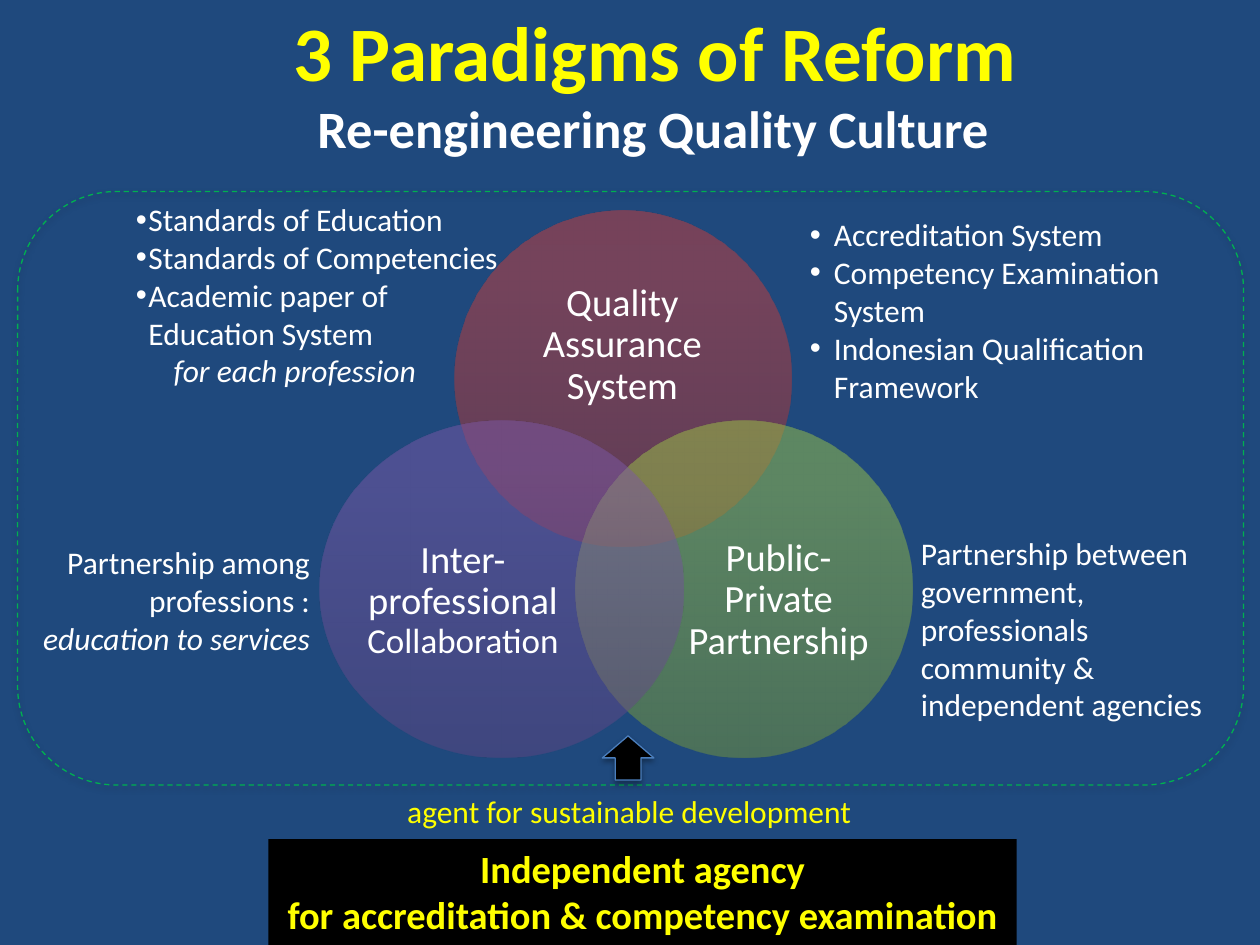
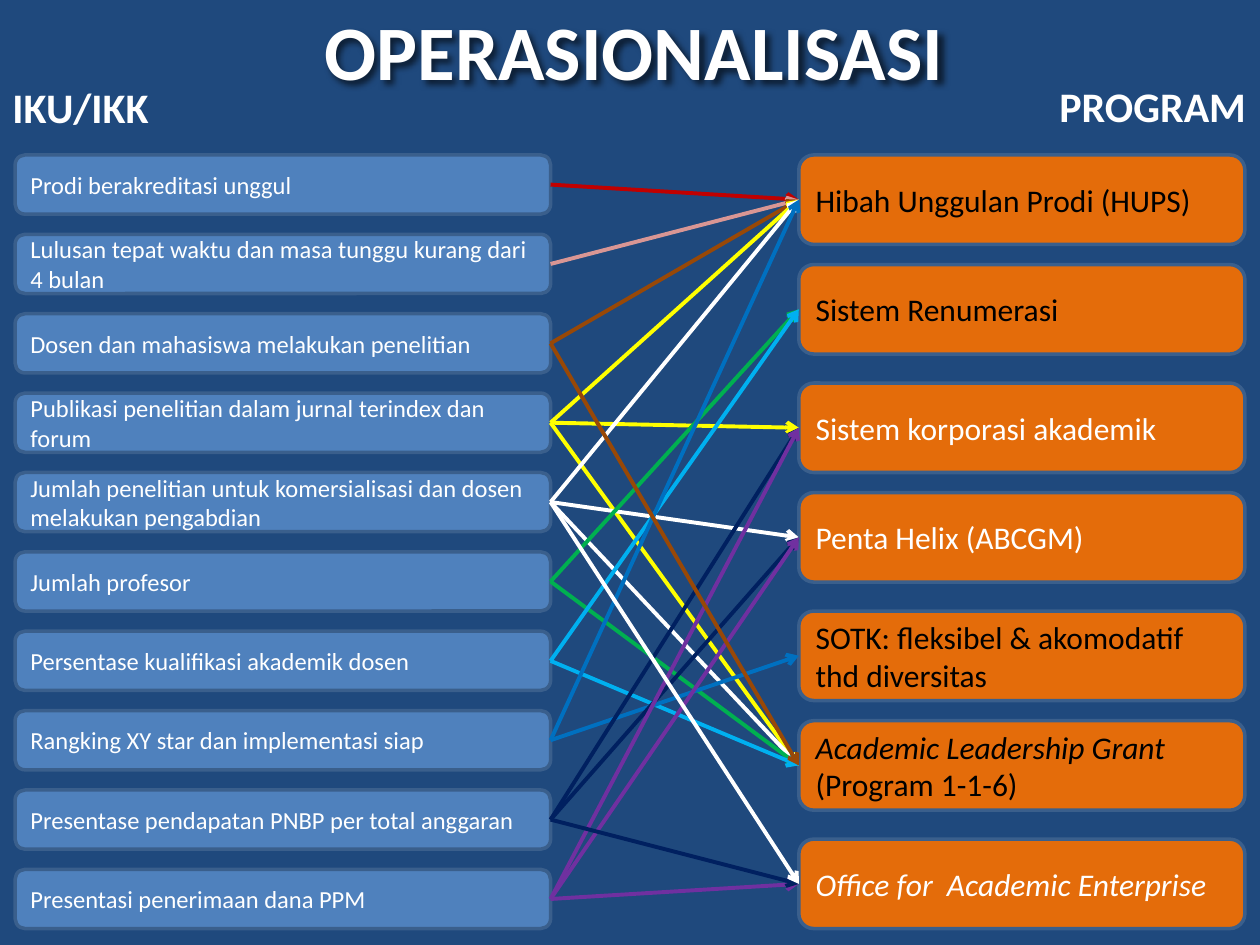
from dataclasses import dataclass

from lxml.etree import SubElement as Sub
from pptx import Presentation
from pptx.dml.color import RGBColor as Rgb
from pptx.enum.dml import MSO_LINE as Dash
from pptx.enum.shapes import MSO_CONNECTOR as Link, MSO_SHAPE as Kind
from pptx.enum.text import MSO_ANCHOR as Anchor, MSO_AUTO_SIZE as Fit, PP_ALIGN as Align
from pptx.oxml.ns import qn
from pptx.util import Inches, Pt


@dataclass(frozen=True)
class Theme:
    font: str = "Calibri"
    back: str = "1F497D"
    white: str = "FFFFFF"
    black: str = "000000"
    gold: str = "FFFF00"
    green: str = "00B050"
    blue: str = "4F81BD"
    edge: str = "3A5F8C"
    rim: str = "4B7EBC"
    orange: str = "E46C0A"
    red_fade: tuple = ("9C2F2D", "CB3E3A", "CE3B37")
    lime_fade: tuple = ("779737", "9BC348", "9DC746")
    plum_fade: tuple = ("5F4480", "7B58A6", "7C57A8")
    rays: tuple = ("C00000", "D99694", "984807", "FFFF00", "FFFFFF",
                   "00B050", "00B0F0", "0070C0", "002060", "7030A0")
    title: int = 44
    lead: int = 30
    head: int = 24
    ring: int = 22
    sub: int = 20
    body: int = 18
    small: int = 14


THEME = Theme()


def add_shade(shape, blur, dist, angle, alpha):
    shape.shadow.inherit = False
    shade = Sub(shape._element.spPr.find(qn("a:effectLst")), qn("a:outerShdw"),
                blurRad=str(Pt(blur)), dist=str(Pt(dist)),
                dir=str(angle * 60000), algn="tl", rotWithShape="0")
    tone = Sub(shade, qn("a:srgbClr"), val=THEME.black)
    Sub(tone, qn("a:alpha"), val=str(alpha * 1000))


def write(shape, *paras, anchor=Anchor.TOP, pad=None, wrap=True, fit=Fit.NONE, **base):
    frame = shape.text_frame
    frame.word_wrap = wrap
    frame.auto_size = fit
    frame.vertical_anchor = anchor
    if pad is not None:
        frame.margin_left = frame.margin_right = Inches(pad)
        frame.margin_top = frame.margin_bottom = Inches(pad)
    for i, para in enumerate(paras):
        line = frame.paragraphs[0] if i == 0 else frame.add_paragraph()
        runs = para if isinstance(para, list) else [(para, {})]
        look = base | runs[0][1]
        line.alignment = look.get("align", Align.LEFT)
        if "space" in look:
            line.line_spacing = look["space"]
        if "inset" in look:
            props = line._p.get_or_add_pPr()
            left, first = look["inset"]
            props.set("marL", str(Inches(left)))
            props.set("indent", str(Inches(first)))
            if look.get("mark"):
                Sub(props, qn("a:buFont"), typeface="Arial")
                Sub(props, qn("a:buChar"), char=look["mark"])
        for text, extra in runs:
            look = base | extra
            if text == "\n":
                line.add_line_break()
                continue
            run = line.add_run()
            run.text = text
            font = run.font
            font.name = THEME.font
            font.size = Pt(look.get("size", THEME.body))
            font.bold = look.get("bold", False)
            font.italic = look.get("italic", False)
            font.color.rgb = Rgb.from_string(look.get("color", THEME.white))


class Deck:
    def __init__(self, theme):
        self.theme = theme
        self.show = Presentation()
        self.show.slide_width, self.show.slide_height = Inches(10), Inches(7.5)
        self.slide = None

    def start(self, text, box, shade=False, **look):
        self.slide = self.show.slides.add_slide(self.show.slide_layouts[5])
        paint = self.slide.background.fill
        paint.solid()
        paint.fore_color.rgb = Rgb.from_string(self.theme.back)
        title = self.slide.shapes.title
        title.left, title.top, title.width, title.height = map(Inches, box)
        write(title, text, anchor=Anchor.MIDDLE, align=Align.CENTER,
              size=self.theme.title, bold=True, **look)
        if shade:
            add_shade(title, 4, 3, 45, 60)

    def text(self, box, *paras, **look):
        label = self.slide.shapes.add_textbox(*map(Inches, box))
        write(label, *paras, **look)

    def shape(self, kind, box, fill=None, line=None, width=0.75, dash=None, shade=False):
        item = self.slide.shapes.add_shape(kind, *map(Inches, box))
        item.shadow.inherit = False
        if fill:
            item.fill.solid()
            item.fill.fore_color.rgb = Rgb.from_string(fill)
        else:
            item.fill.background()
        if line:
            item.line.color.rgb = Rgb.from_string(line)
            item.line.width = Pt(width)
        else:
            item.line.fill.background()
        if dash:
            item.line.dash_style = dash
        if shade:
            add_shade(item, 3.1, 1.8, 90, 35)
        return item

    def ring(self, box, fade):
        item = self.shape(Kind.OVAL, box)
        item.fill.gradient()
        item.fill.gradient_angle = 90
        stops = item._element.spPr.find(".//" + qn("a:gsLst"))
        for old in list(stops):
            stops.remove(old)
        for place, color in zip((0, 80, 100), fade):
            stop = Sub(stops, qn("a:gs"), pos=str(place * 1000))
            tone = Sub(stop, qn("a:srgbClr"), val=color)
            Sub(tone, qn("a:alpha"), val="50000")

    def card(self, box, fill, *paras, **look):
        item = self.shape(Kind.ROUNDED_RECTANGLE, box, fill, self.theme.edge, 2)
        write(item, *paras, anchor=Anchor.MIDDLE, **look)
        return item

    def arrow(self, start, end, color):
        line = self.slide.shapes.add_connector(
            Link.STRAIGHT, start.left + start.width, start.top + start.height // 2,
            end.left, end.top + end.height // 2)
        line.begin_connect(start, 3)
        line.end_connect(end, 1)
        line.line.color.rgb = Rgb.from_string(color)
        line.line.width = Pt(2.25)
        props = line._element.spPr
        Sub(props.find(qn("a:ln")), qn("a:tailEnd"), type="arrow")
        Sub(props, qn("a:effectLst"))


def draw_reform(deck):
    t = deck.theme
    deck.start("3 Paradigms of Reform", (0.7, -0.22, 9, 1.25), color=t.gold)
    deck.shape(Kind.ROUNDED_RECTANGLE, (0.14, 1.52, 9.73, 4.71),
               line=t.green, dash=Dash.DASH, shade=True)
    rings = (
        ((3.61, 1.67, 2.67, 2.67), t.red_fade, (3.96, 2.14, 1.96, 1.2),
         "Quality Assurance System"),
        ((4.57, 3.34, 2.67, 2.67), t.lime_fade, (5.38, 4.03, 1.6, 1.47),
         "Public-Private Partnership"),
        ((2.54, 3.34, 2.88, 2.67), t.plum_fade, (2.81, 4.03, 1.73, 1.47),
         [("Inter-professional ", {}), ("Collaboration", {"size": t.sub})]),
    )
    for oval, fade, box, words in rings:
        deck.ring(oval, fade)
        deck.text(box, words, size=t.ring, anchor=Anchor.MIDDLE, pad=0,
                  align=Align.CENTER, space=0.9)

    deck.text((0.98, 1.54, 3.17, 1.92),
              "Standards of Education", "Standards of Competencies",
              "Academic paper of Education System",
              [("for each profession", {"italic": True, "mark": None, "inset": (0.19, 0.11)})],
              mark="•", inset=(0.1, -0.1))
    deck.text((6.33, 1.66, 3.39, 1.92),
              "Accreditation System", "Competency Examination System",
              "Indonesian Qualification Framework", mark="•", inset=(0.19, -0.19))
    deck.text((7.21, 4.19, 2.52, 1.62), "Partnership between government, "
              "professionals community & independent agencies")
    deck.text((-0.1, 4.26, 2.66, 1.01), "Partnership among professions :",
              [("education to services", {"italic": True})], align=Align.RIGHT)
    deck.shape(Kind.UP_ARROW, (4.78, 5.84, 0.41, 0.35), t.black, t.rim, shade=True)

    base = deck.shape(Kind.RECTANGLE, (2.13, 6.66, 5.94, 0.84), t.black)
    write(base, "Independent agency", "for accreditation & competency examination",
          size=t.ring, color=t.gold, bold=True, align=Align.CENTER)
    deck.text((2.34, 0.71, 5.69, 0.61), "Re-engineering Quality Culture",
              size=t.lead, bold=True, align=Align.CENTER)
    deck.text((2.63, 6.24, 4.73, 0.4), "agent for sustainable development",
              color=t.gold, align=Align.CENTER)


def draw_links(deck):
    t = deck.theme
    deck.start("OPERASIONALISASI", (2.24, -0.03, 5.59, 0.85), shade=True)
    for box, head in (((0, 0.6, 1.29, 0.5), "IKU/IKK"), ((8.31, 0.59, 1.7, 0.5), "PROGRAM")):
        deck.text(box, head, size=t.head, bold=True, wrap=False, fit=Fit.SHAPE_TO_FIT_TEXT)

    goals = (
        "Prodi berakreditasi unggul",
        "Lulusan tepat waktu dan masa tunggu kurang dari 4 bulan",
        "Dosen dan mahasiswa melakukan penelitian",
        "Publikasi penelitian dalam jurnal terindex dan forum",
        "Jumlah penelitian untuk komersialisasi dan dosen melakukan pengabdian",
        "Jumlah profesor",
        "Persentase kualifikasi akademik dosen",
        "Rangking XY star dan implementasi siap",
        "Presentase pendapatan PNBP per total anggaran",
        "Presentasi penerimaan dana PPM",
    )
    plans = (
        ("Hibah Unggulan Prodi (HUPS)", t.black),
        ("Sistem Renumerasi", t.black),
        ("Sistem korporasi akademik", t.white),
        ("Penta Helix (ABCGM)", t.white),
        ("SOTK: fleksibel & akomodatif thd diversitas", t.black),
        ([("Academic Leadership Grant", {"italic": True}), ("\n", {}),
          ("(Program 1-1-6)", {})], t.black),
        ([("Office for  Academic Enterprise", {"italic": True})], t.white),
    )
    top = 1.23
    left = [deck.card((0.12, top + 0.63 * i, 4.25, 0.47), t.blue, goal, size=t.small)
            for i, goal in enumerate(goals)]
    right = [deck.card((6.34, top + 1.81 * (i // 2) + 0.87 * (i % 2), 3.54, 0.71),
                       t.orange, plan, color=color)
             for i, (plan, color) in enumerate(plans)]

    pairs = ((0, 0), (1, 0), (2, 0), (3, 0), (3, 5), (3, 2), (4, 5), (4, 0),
             (4, 3), (5, 5), (5, 1), (6, 1), (6, 5), (7, 4), (7, 0), (8, 2),
             (8, 3), (9, 3), (9, 2), (2, 5), (9, 6), (8, 6), (4, 6))
    for goal, plan in pairs:
        deck.arrow(left[goal], right[plan], t.rays[goal])


def main():
    deck = Deck(THEME)
    draw_reform(deck)
    draw_links(deck)
    deck.show.save("out.pptx")


if __name__ == "__main__":
    main()
